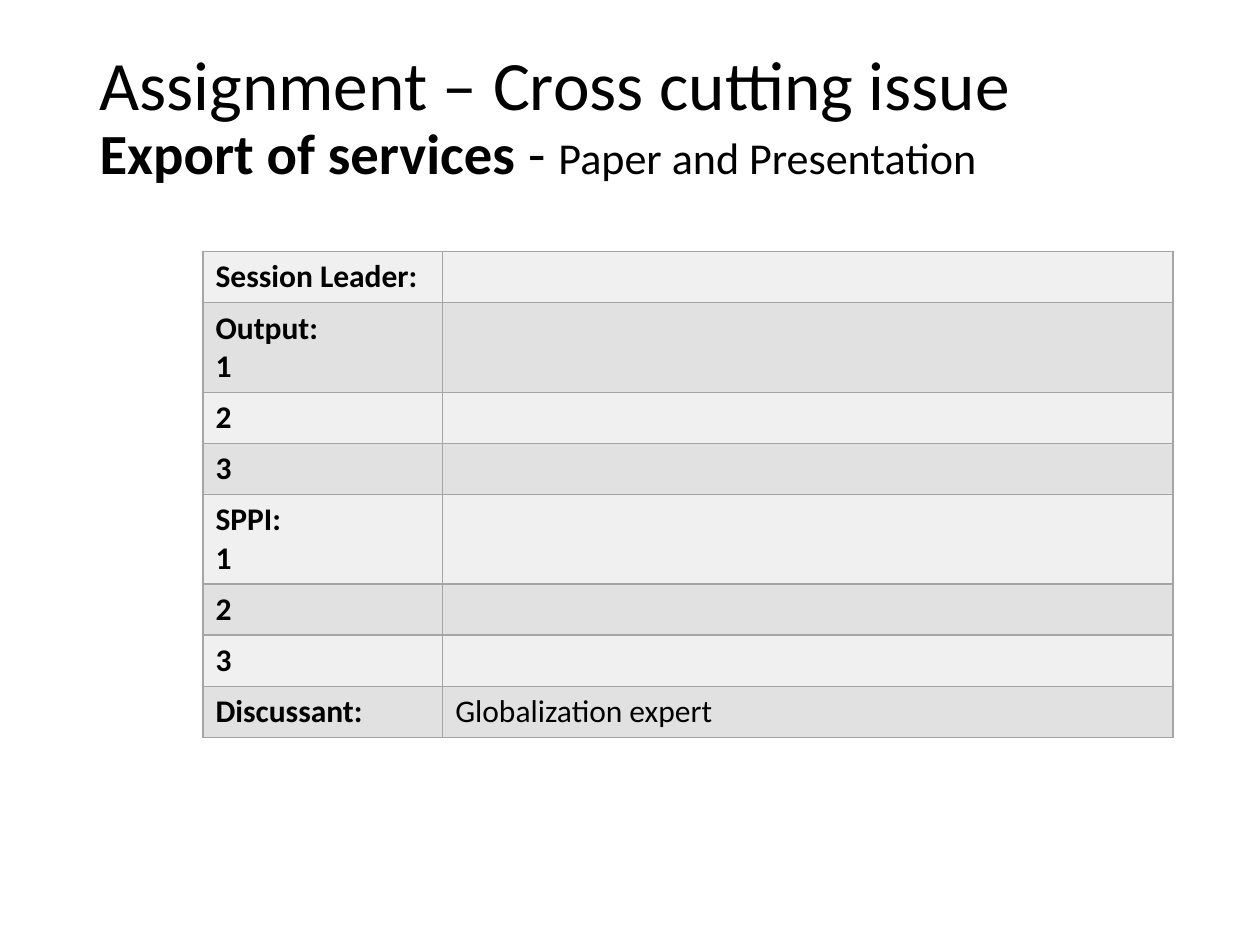
from typing import NamedTuple

from lxml.etree import SubElement
from pptx import Presentation
from pptx.dml.color import RGBColor
from pptx.enum.text import MSO_ANCHOR as Anchor, MSO_AUTO_SIZE as AutoSize, PP_ALIGN as Align
from pptx.oxml.ns import qn
from pptx.util import Pt

FONT = "Calibri"
BLACK = "000000"
BORDER = "A5A5A5"
BANDS = ("F0F0F0", "E1E1E1")
ROW_HEIGHT, EXTRA_LINE = 29.2, 22
COLUMN_WIDTHS = (137, 417.4)


class Phrase(NamedTuple):
    text: str
    size: float
    bold: bool = False


class Role(NamedTuple):
    label: str
    person: str = ""


HEADING = (
    (Phrase("Assignment – Cross cutting issue", 39.6),),
    (
        Phrase("Export of services ", 32.4, True),
        Phrase("- ", 32.4),
        Phrase("Paper and Presentation", 25.2),
    ),
)
ROLES = (
    Role("Session Leader:"),
    Role("Output:\n1"),
    Role("2"),
    Role("3"),
    Role("SPPI:\n1"),
    Role("2"),
    Role("3"),
    Role("Discussant:", "Globalization expert"),
)


def color(hex_value: str) -> RGBColor:
    return RGBColor.from_string(hex_value)


def style_font(font, size: float, bold: bool) -> None:
    font.name = FONT
    font.size = Pt(size)
    font.bold = bold
    font.color.rgb = color(BLACK)


def add_borders(cell) -> None:
    properties = cell._tc.get_or_add_tcPr()
    for side in ("a:lnL", "a:lnR", "a:lnT", "a:lnB"):
        line = SubElement(properties, qn(side), w=str(Pt(1)))
        fill = SubElement(line, qn("a:solidFill"))
        SubElement(fill, qn("a:srgbClr"), val=BORDER)


def fill_cell(cell, text: str, bold: bool, band: str) -> None:
    cell.text_frame.text = text
    for paragraph in cell.text_frame.paragraphs:
        style_font(paragraph.font, 18, bold)
        for run in paragraph.runs:
            style_font(run.font, 18, bold)
    add_borders(cell)
    cell.fill.solid()
    cell.fill.fore_color.rgb = color(band)


def write_heading(title) -> None:
    title.left, title.top, title.width, title.height = Pt(49.7), Pt(28.8), Pt(620.6), Pt(104.4)
    frame = title.text_frame
    frame.auto_size = AutoSize.NONE
    frame.word_wrap = True
    frame.vertical_anchor = Anchor.TOP
    frame.margin_top = 0
    for index, phrases in enumerate(HEADING):
        paragraph = frame.add_paragraph() if index else frame.paragraphs[0]
        paragraph.alignment = Align.LEFT
        paragraph.line_spacing = 0.9
        for phrase in phrases:
            run = paragraph.add_run()
            run.text = phrase.text
            style_font(run.font, phrase.size, phrase.bold)


def draw_roles(slide) -> None:
    heights = [ROW_HEIGHT + EXTRA_LINE * role.label.count("\n") for role in ROLES]
    roster = slide.shapes.add_table(
        len(ROLES), len(COLUMN_WIDTHS),
        Pt(116), Pt(143.8), Pt(sum(COLUMN_WIDTHS)), Pt(sum(heights)),
    ).table
    for column, width in zip(roster.columns, COLUMN_WIDTHS):
        column.width = Pt(width)
    for index, (role, height) in enumerate(zip(ROLES, heights)):
        roster.rows[index].height = Pt(height)
        band = BANDS[index % 2]
        fill_cell(roster.cell(index, 0), role.label, True, band)
        fill_cell(roster.cell(index, 1), role.person, False, band)


def main() -> None:
    deck = Presentation()
    deck.slide_width, deck.slide_height = Pt(720), Pt(540)
    slide = deck.slides.add_slide(deck.slide_layouts[5])  # title only

    # Two-line heading
    write_heading(slide.shapes.title)

    # Roles in the session
    draw_roles(slide)

    deck.save("out.pptx")


if __name__ == "__main__":
    main()
